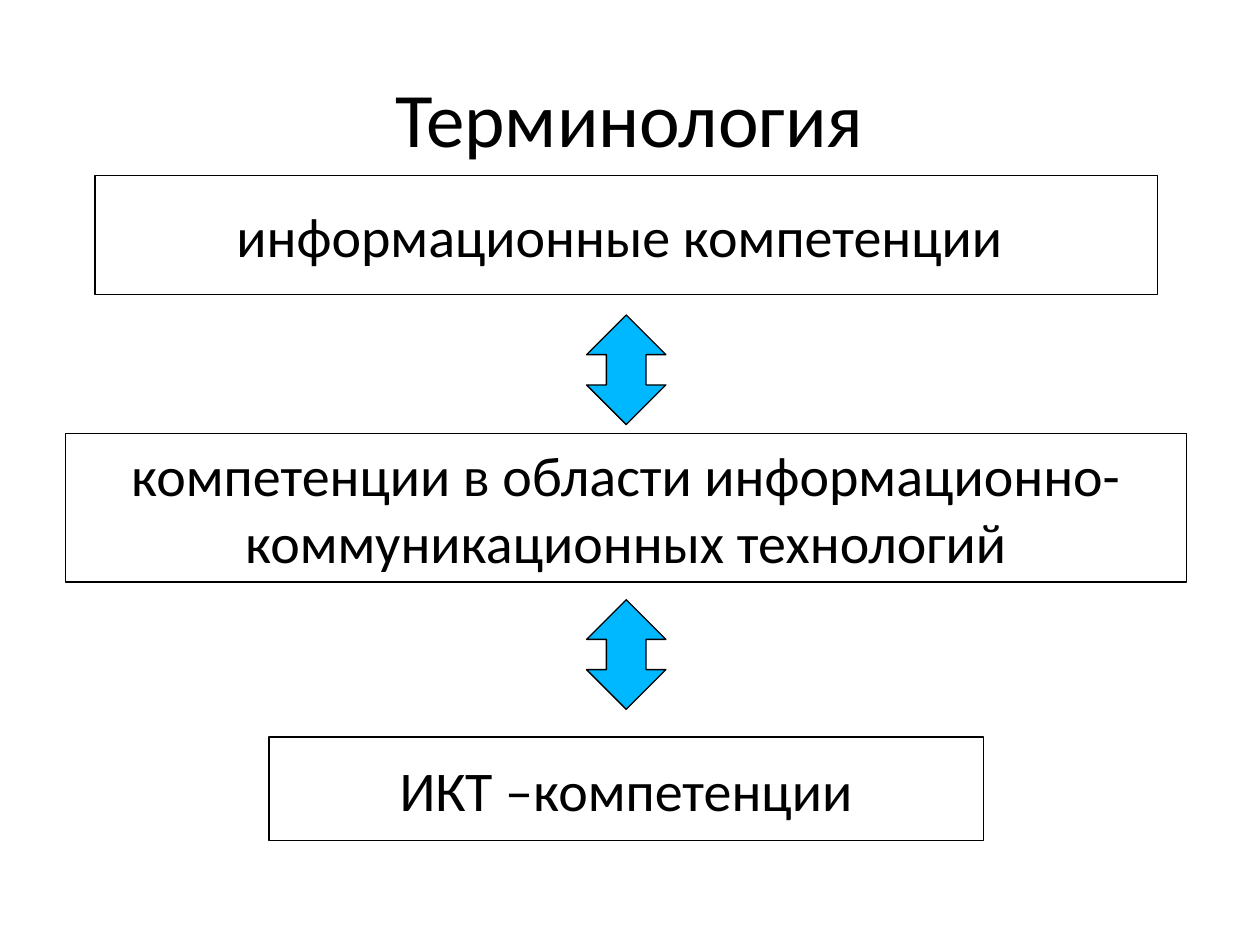
from dataclasses import dataclass

from pptx import Presentation
from pptx.dml.color import RGBColor
from pptx.enum.shapes import MSO_SHAPE as Preset
from pptx.enum.text import MSO_ANCHOR as Anchor, PP_ALIGN as Align
from pptx.util import Inches, Pt

CENTER_X = 4.97
ARROW_LENGTH, ARROW_THICKNESS = 0.87, 0.63
BLACK = "000000"
ARROW_BLUE = "00B8FF"


@dataclass(frozen=True)
class TermBox:
    text: str
    top: float
    width: float
    height: float


TERMS = [
    TermBox("информационные компетенции ", 1.39, 8.43, 0.95),
    TermBox("компетенции в области информационно-коммуникационных технологий", 3.44, 8.9, 1.18),
    TermBox("ИКТ –компетенции", 5.85, 5.67, 0.82),
]
ARROW_TOPS = [2.62, 4.88]


def color(value: str) -> RGBColor:
    return RGBColor.from_string(value)


def write_text(shape, text: str, size: int) -> None:
    frame = shape.text_frame
    frame.word_wrap = True
    frame.vertical_anchor = Anchor.MIDDLE
    paragraph = frame.paragraphs[0]
    paragraph.alignment = Align.CENTER
    run = paragraph.add_run()
    run.text = text
    font_format = {"name": "Calibri", "size": Pt(size), "bold": False}
    for name, value in font_format.items():
        setattr(run.font, name, value)
    run.font.color.rgb = color(BLACK)


def add_outlined(slide, preset, top: float, width: float, height: float):
    left = CENTER_X - width / 2
    shape = slide.shapes.add_shape(
        preset, Inches(left), Inches(top), Inches(width), Inches(height)
    )
    shape.shadow.inherit = False
    shape.line.color.rgb = color(BLACK)
    shape.line.width = Pt(0.75)
    return shape


def add_term(slide, term: TermBox) -> None:
    shape = add_outlined(slide, Preset.RECTANGLE, term.top, term.width, term.height)
    shape.fill.background()
    write_text(shape, term.text, 32)


def add_arrow(slide, top: float) -> None:
    shape = add_outlined(
        slide, Preset.LEFT_RIGHT_ARROW, top, ARROW_LENGTH, ARROW_THICKNESS
    )
    shape.rotation = 90
    shape.fill.solid()
    shape.fill.fore_color.rgb = color(ARROW_BLUE)


def add_title(slide, text: str) -> None:
    shape = slide.shapes.add_textbox(Inches(0.5), Inches(0.3), Inches(9), Inches(1.25))
    write_text(shape, text, 44)


def main() -> None:
    presentation = Presentation()
    presentation.slide_width = Inches(10)
    presentation.slide_height = Inches(7.5)
    slide = presentation.slides.add_slide(presentation.slide_layouts[6])
    add_title(slide, "Терминология")
    for term in TERMS:
        add_term(slide, term)
    for top in ARROW_TOPS:
        add_arrow(slide, top)
    presentation.save("out.pptx")


if __name__ == "__main__":
    main()
